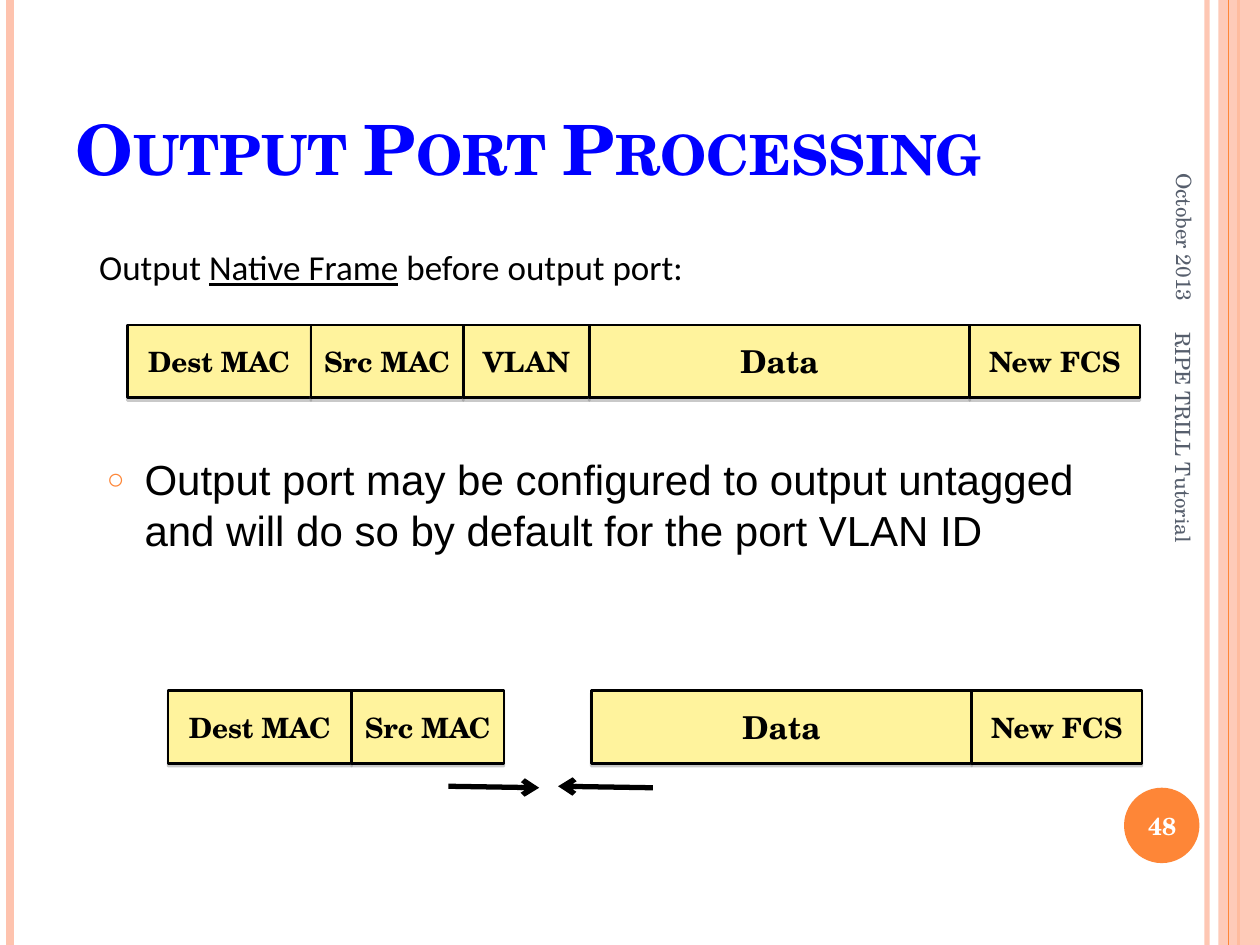
from dataclasses import dataclass

from lxml import etree
from pptx import Presentation
from pptx.dml.color import RGBColor
from pptx.enum.shapes import MSO_CONNECTOR, MSO_SHAPE
from pptx.enum.text import MSO_ANCHOR, MSO_AUTO_SIZE, PP_ALIGN
from pptx.oxml.ns import qn
from pptx.util import Cm, Pt


@dataclass(frozen=True)
class Theme:
    serif: str = "TeX Gyre Schola"
    sans: str = "Arial"
    caption_font: str = "Calibri"
    black: str = "000000"
    white: str = "FFFFFF"
    title_blue: str = "0000FF"
    slate: str = "575F6D"
    peach: str = "FEC3AE"
    orange: str = "FE8637"
    field_yellow: str = "FFF39D"
    shadow_gray: str = "808080"
    title_size: float = 39.6
    body_size: float = 24
    caption_size: float = 20
    data_size: float = 18
    field_size: float = 16
    number_size: float = 14
    side_size: float = 12


def add_element(parent, tag, **attributes):
    return etree.SubElement(parent, qn(tag), attributes)


def set_alpha(element, percent):
    color = next(element.iter(qn("a:srgbClr")))
    add_element(color, "a:alpha", val=str(percent * 1000))


class SlideBuilder:
    def __init__(self, page, theme):
        self.page = page
        self.theme = theme

    def style(self, para, font, size, color, bold=False, align=PP_ALIGN.LEFT):
        para.alignment = align
        para.font.name = font
        para.font.size = Pt(size)
        para.font.bold = bold
        para.font.color.rgb = RGBColor.from_string(color)

    def place(self, shape, left, top, width, height):
        shape.left, shape.top = Cm(left), Cm(top)
        shape.width, shape.height = Cm(width), Cm(height)

    def line(self, start, end, color, weight, alpha=None, arrow=False):
        connector = self.page.shapes.add_connector(
            MSO_CONNECTOR.STRAIGHT, *map(Cm, start + end))
        connector.line.color.rgb = RGBColor.from_string(color)
        connector.line.width = Pt(weight)
        outline = connector.line._ln
        if alpha:
            set_alpha(outline, alpha)
        if arrow:
            add_element(outline, "a:tailEnd", type="arrow")
        add_element(connector._element.spPr, "a:effectLst")

    def shape(self, kind, left, top, width, height, color):
        shape = self.page.shapes.add_shape(
            kind, Cm(left), Cm(top), Cm(width), Cm(height))
        shape.shadow.inherit = False
        shape.fill.solid()
        shape.fill.fore_color.rgb = RGBColor.from_string(color)
        shape.line.fill.background()
        return shape

    def field(self, label, left, top, width, height, size):
        box = self.shape(MSO_SHAPE.RECTANGLE, left, top, width, height,
                         self.theme.field_yellow)
        box.line.color.rgb = RGBColor.from_string(self.theme.black)
        box.line.width = Pt(1.5)
        effects = box._element.spPr.find(qn("a:effectLst"))
        shadow = add_element(effects, "a:outerShdw", blurRad="0",
                             dist=str(Pt(1.6)), dir="5400000", rotWithShape="0")
        add_element(shadow, "a:srgbClr", val=self.theme.shadow_gray)
        set_alpha(shadow, 42)
        frame = box.text_frame
        frame.word_wrap = False
        frame.vertical_anchor = MSO_ANCHOR.MIDDLE
        frame.text = label
        self.style(frame.paragraphs[0], self.theme.serif, size,
                   self.theme.black, True, PP_ALIGN.CENTER)

    def field_row(self, fields, left, top, height=1.47):
        for label, width, size in fields:
            self.field(label, left, top, width, height, size)
            left += width

    def text(self, spans, left, top, width, height, *style,
             rotation=0, anchor=MSO_ANCHOR.MIDDLE):
        box = self.page.shapes.add_textbox(
            Cm(left), Cm(top), Cm(width), Cm(height))
        box.rotation = rotation
        frame = box.text_frame
        frame.word_wrap = True
        frame.vertical_anchor = anchor
        para = frame.paragraphs[0]
        for words, underlined in spans:
            span = para.add_run()
            span.text = words
            if underlined:
                span.font.underline = True
        self.style(para, *style)

    def title(self, words, *area):
        box = self.page.shapes.title
        self.place(box, *area)
        frame = box.text_frame
        frame.text = words
        frame.auto_size = MSO_AUTO_SIZE.NONE
        frame.vertical_anchor = MSO_ANCHOR.BOTTOM
        para = frame.paragraphs[0]
        self.style(para, self.theme.serif, self.theme.title_size,
                   self.theme.title_blue, True)
        para._p.pPr.find(qn("a:defRPr")).set("cap", "small")

    def bullets(self, items, *area):
        box = self.page.placeholders[1]
        self.place(box, *area)
        frame = box.text_frame
        frame.text = "\n".join(items)
        frame.auto_size = MSO_AUTO_SIZE.NONE
        for para in frame.paragraphs:
            para.space_before = Pt(0)
            properties = para._p.get_or_add_pPr()
            properties.set("marL", str(Cm(0.76)))
            properties.set("indent", str(-Cm(0.76)))
            color = add_element(properties, "a:buClr")
            add_element(color, "a:srgbClr", val=self.theme.orange)
            add_element(properties, "a:buSzPct", val="70000")
            add_element(properties, "a:buChar", char="○")
            self.style(para, self.theme.sans, self.theme.body_size,
                       self.theme.black)


def main():
    theme = Theme()
    deck = Presentation()
    deck.slide_width, deck.slide_height = Cm(25.4), Cm(19.05)
    builder = SlideBuilder(deck.slides.add_slide(deck.slide_layouts[1]), theme)

    # Edge stripes and page number disc
    def stripe(x, color, weight, alpha=None):
        builder.line((x, 0), (x, 19.05), color, weight, alpha)

    stripe(24.33, theme.peach, 3, 93)
    stripe(0.2, theme.peach, 4.5)
    stripe(24.97, theme.orange, 1.5)
    band = builder.shape(MSO_SHAPE.RECTANGLE, 24.56, 0, 0.84, 19.05, theme.peach)
    set_alpha(band._element.spPr, 87)
    stripe(24.77, theme.orange, 0.75)
    builder.shape(MSO_SHAPE.OVAL, 22.66, 15.88, 1.52, 1.52, theme.orange)

    # Title, date, page number and footer
    builder.title("Output Port Processing", 1.27, 0.76, 20.75, 3.18)
    side_style = (theme.serif, theme.side_size, theme.slate, False)
    builder.text([("October 2013", False)], 21.08, 3, 5.59, 1.07,
                 *side_style, PP_ALIGN.RIGHT, rotation=90)
    builder.text([("48", False)], 22.58, 15.93, 1.7, 1.45, theme.serif,
                 theme.number_size, theme.white, True, PP_ALIGN.CENTER)
    builder.text([("RIPE TRILL Tutorial", False)], 19.41, 10.39, 8.89, 1.02,
                 *side_style, rotation=90)

    # Tagged frame
    builder.text([("Output ", False), ("Native Frame", True),
                  (" before output port:", False)], 1.75, 4.83, 15.42, 1.12,
                 theme.caption_font, theme.caption_size, theme.black,
                 anchor=MSO_ANCHOR.TOP)
    addresses = [("Dest MAC", 3.7, theme.field_size),
                 ("Src MAC", 3.07, theme.field_size)]
    tag = [("VLAN", 2.54, theme.field_size)]
    payload = [("Data", 7.67, theme.data_size),
               ("New FCS", 3.43, theme.field_size)]
    builder.field_row(addresses + tag + payload, 2.57, 6.55)

    # Explanation
    builder.bullets(["Output port may be configured to output untagged "
                     "and will do so by default for the port VLAN ID"],
                    1.9, 9.02, 21.59, 4.72)

    # Untagged frame, with arrows closing the gap
    builder.field_row(addresses, 3.39, 13.92)
    builder.field_row(payload, 11.92, 13.92)
    for start, end in (((9.04, 15.85), (10.87, 15.88)),
                       ((13.16, 15.88), (11.25, 15.85))):
        builder.line(start, end, theme.black, 3, arrow=True)

    deck.save("out.pptx")


if __name__ == "__main__":
    main()
